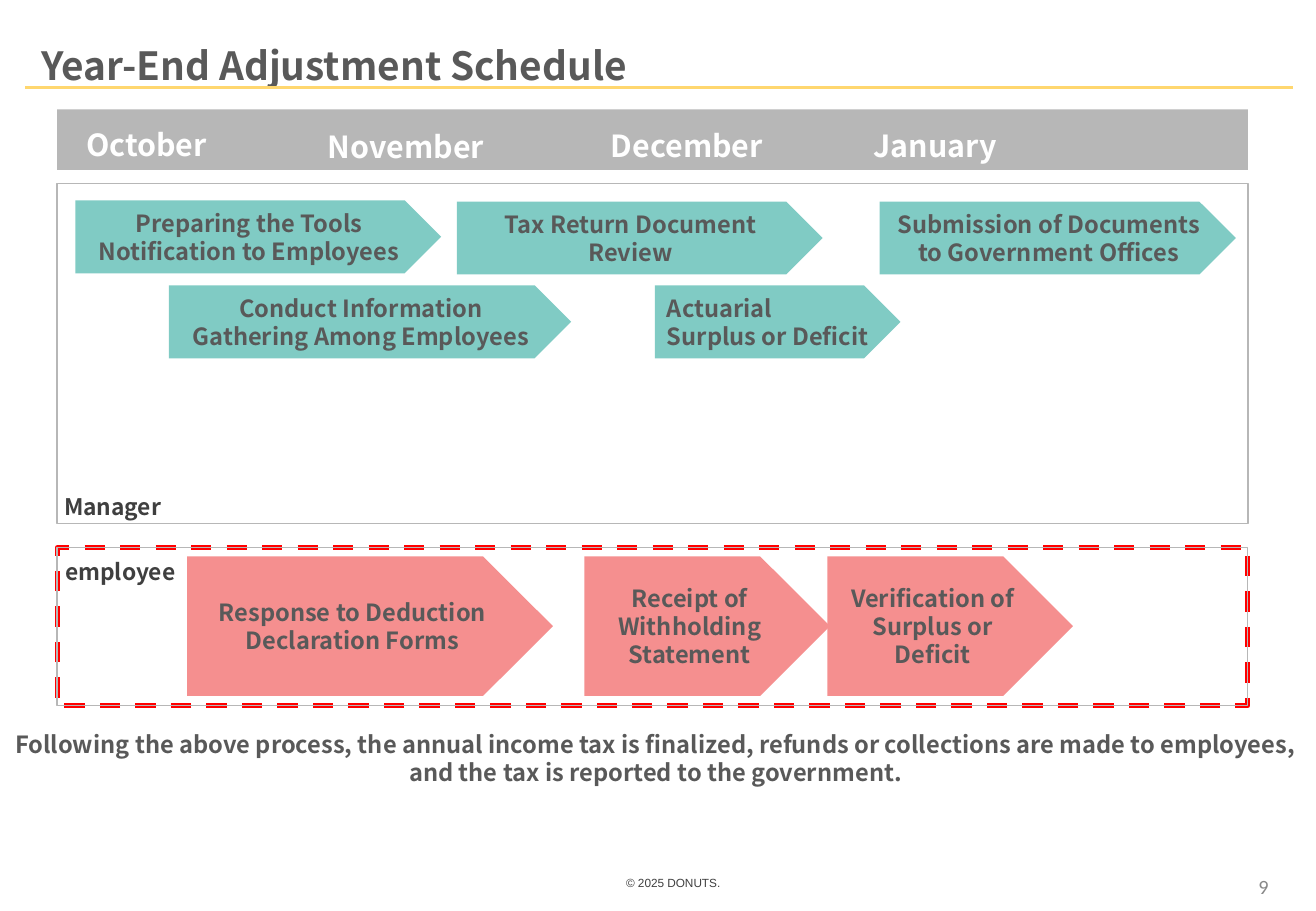
"""Build the year-end adjustment schedule slide."""
from dataclasses import dataclass

from lxml import etree
from pptx import Presentation
from pptx import util as u
from pptx.dml.color import RGBColor
from pptx.enum import dml, shapes, text
from pptx.oxml import ns

PX = 9144
LEFT, MID, RIGHT = text.PP_ALIGN.LEFT, text.PP_ALIGN.CENTER, text.PP_ALIGN.RIGHT
TOP, CORE, LOW = text.MSO_ANCHOR.TOP, text.MSO_ANCHOR.MIDDLE, text.MSO_ANCHOR.BOTTOM
RECT = shapes.MSO_SHAPE.RECTANGLE
ARROW = shapes.MSO_SHAPE.PENTAGON


@dataclass(frozen=True)
class Theme:
    font: str = "Noto Sans CJK JP"
    ink: str = "595959"
    dark: str = "3F3F3F"
    note: str = "404040"
    pale: str = "888888"
    white: str = "FFFFFF"
    gray: str = "B7B7B7"
    gold: str = "FFD76F"
    red: str = "FF0000"
    teal: str = "80CBC4"
    pink: str = "F58F8F"
    head: float = 23
    month: float = 18
    body: float = 14
    role: float = 13.5
    page: float = 12
    small: float = 7


class Deck:
    def __init__(self, theme):
        self.theme = theme
        self.prs = Presentation()
        self.prs.slide_width, self.prs.slide_height = 1083 * PX, 750 * PX
        self.slide = self.prs.slides.add_slide(self.prs.slide_layouts[5])

    def letter(self, shape, words, size, color, align=LEFT, anchor=TOP,
               font=None, bold=True, pad=(10, 5)):
        frame = shape.text_frame
        frame.text = words
        frame.word_wrap = True
        frame.auto_size = text.MSO_AUTO_SIZE.NONE
        frame.vertical_anchor = anchor
        frame.margin_left = frame.margin_right = pad[0] * PX
        frame.margin_top = frame.margin_bottom = pad[1] * PX
        for para in frame.paragraphs:
            para.alignment = align
            for run in para.runs:
                run.font.name = font or self.theme.font
                run.font.size = u.Pt(size)
                run.font.bold = bold
                run.font.color.rgb = RGBColor.from_string(color)

    def title(self, box, words):
        shape = self.slide.shapes.title
        shape.left, shape.top, shape.width, shape.height = (n * PX for n in box)
        self.letter(shape, words, self.theme.head, self.theme.ink, pad=(0, 1))

    def label(self, box, words, size, color, **style):
        shape = self.slide.shapes.add_textbox(*(n * PX for n in box))
        self.letter(shape, words, size, color, **style)

    def shape(self, kind, box, fill=None, line=None, width=1, dash=None):
        shape = self.slide.shapes.add_shape(kind, *(n * PX for n in box))
        shape.shadow.inherit = False
        if fill:
            shape.fill.solid()
            shape.fill.fore_color.rgb = RGBColor.from_string(fill)
        else:
            shape.fill.background()
        if line:
            shape.line.color.rgb = RGBColor.from_string(line)
            shape.line.width = u.Pt(width)
            if dash:
                shape.line.dash_style = dash
        else:
            shape.line.fill.background()
        return shape

    def step(self, box, words, fill, align=MID):
        shape = self.shape(ARROW, box, fill)
        self.letter(shape, words, self.theme.body, self.theme.ink, align, CORE)

    def rule(self, x, y, end, color, width):
        line = self.slide.shapes.add_connector(
            shapes.MSO_CONNECTOR.STRAIGHT, x * PX, y * PX, end * PX, y * PX)
        line.line.color.rgb = RGBColor.from_string(color)
        line.line.width = u.Pt(width)
        etree.SubElement(line._element.spPr, ns.qn("a:effectLst"))


def main():
    look = Theme()
    deck = Deck(look)
    deck.rule(21, 72, 1064, look.gold, 2.04)
    deck.title((34, 33, 649, 40), "Year-End Adjustment Schedule")

    deck.shape(RECT, (47, 90, 980, 50), look.gray)
    for x, y, name in ((61, 99, "October"), (260, 101, "November"),
                       (493, 100, "December"), (709, 100, "January")):
        deck.label((x, y, 160, 57), name, look.month, look.white)

    staff = (47, 451, 980, 130)
    deck.shape(RECT, staff, line=look.red, width=3, dash=dml.MSO_LINE.DASH)
    deck.shape(RECT, (47, 151, 980, 280), line=look.gray)
    deck.shape(RECT, staff, line=look.gray, width=0.75)

    for x, y, wide, words, align in (
            (62, 165, 301, "Preparing the Tools\nNotification to Employees", MID),
            (139, 235, 331, "Conduct Information Gathering Among Employees", MID),
            (376, 166, 301, "Tax Return Document Review", MID),
            (539, 235, 202, "Actuarial\nSurplus or Deficit", LEFT),
            (724, 166, 293, "Submission of Documents to Government Offices", MID)):
        deck.step((x, y, wide, 60), words, look.teal, align)
    for x, wide, words in (
            (154, 301, "Response to Deduction Declaration Forms"),
            (481, 202, "Receipt of Withholding Statement"),
            (681, 202, "Verification of Surplus or Deficit")):
        deck.step((x, 458, wide, 115), words, look.pink)

    deck.label((43, 401, 117, 30), "Manager", look.role, look.dark)
    deck.label((44, 454, 143, 38), "employee", look.role, look.dark)
    deck.label((0, 591, 1079, 67),
               "Following the above process, the annual income tax is finalized, "
               "refunds or collections are made to employees, and the tax is "
               "reported to the government.",
               look.body, look.ink, align=MID, pad=(10, 10))
    deck.label((229, 712, 650, 25), "© 2025 DONUTS.", look.small, look.note,
               align=MID, anchor=LOW, font="Arial", bold=False, pad=(8, 4))
    deck.label((809, 710, 244, 40), "9", look.page, look.pale,
               align=RIGHT, anchor=CORE, font="Calibri", bold=False, pad=(9, 5))
    deck.prs.save("out.pptx")


if __name__ == "__main__":
    main()
